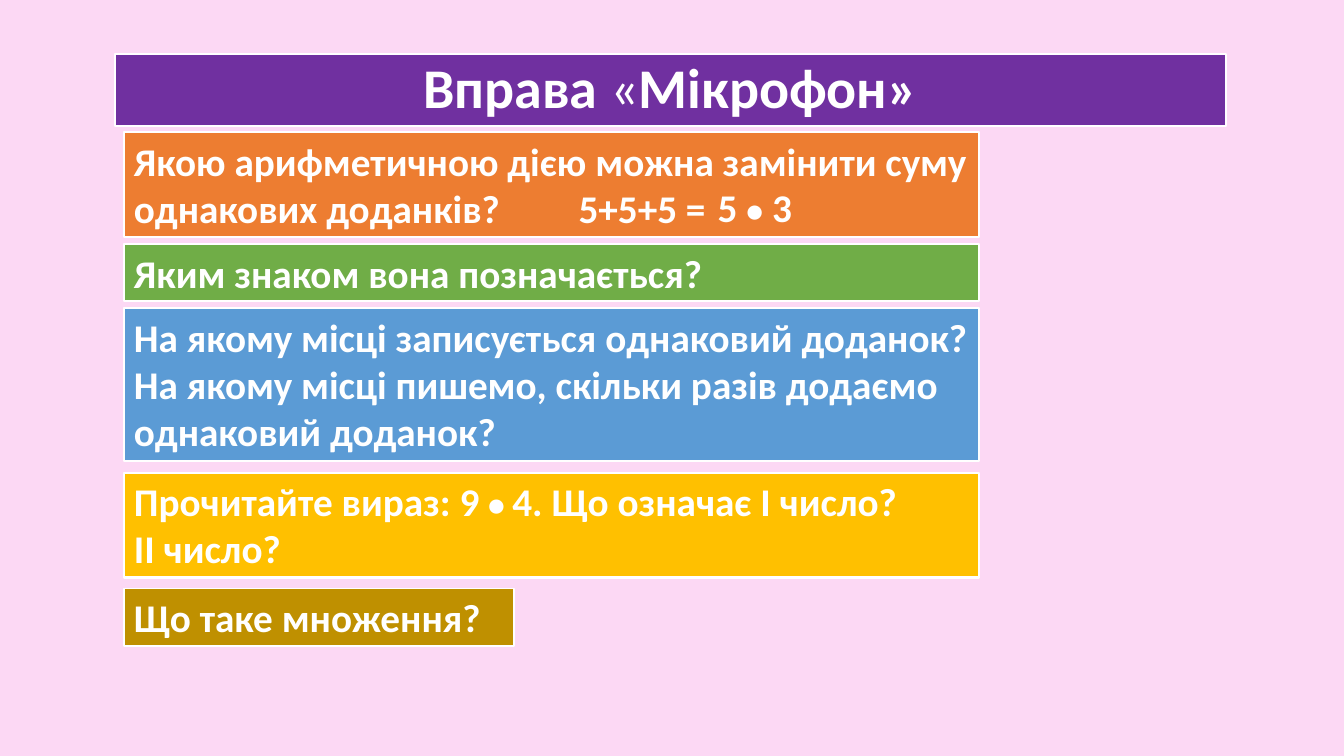
from dataclasses import dataclass

from pptx import Presentation
from pptx import util as u
from pptx.dml.color import RGBColor
from pptx.enum import shapes, text


@dataclass(frozen=True)
class Theme:
    font: str = "Calibri"
    background: str = "FCD8F4"
    ink: str = "FFFFFF"
    title: str = "7030A0"
    operation: str = "ED7D31"
    sign: str = "70AD47"
    places: str = "5B9BD5"
    reading: str = "FFC000"
    definition: str = "BF9000"
    title_size: int = 40
    body_size: int = 28
    dot_size: int = 24
    border: float = 1.5
    thin_border: float = 1


THEME = Theme()


def add_run(paragraph, wording, size=THEME.body_size, bold=True):
    run = paragraph.add_run()
    run.text = wording
    run.font.name = THEME.font
    run.font.size = u.Pt(size)
    run.font.bold = bold
    run.font.color.rgb = RGBColor.from_string(THEME.ink)


def write_lines(frame, lines):
    frame.word_wrap = True
    for index, line in enumerate(lines):
        paragraph = frame.add_paragraph() if index else frame.paragraphs[0]
        paragraph.alignment = text.PP_ALIGN.LEFT
        for run in line:
            add_run(paragraph, *run)


def add_panel(slide, box, color, border=THEME.border):
    panel = slide.shapes.add_shape(shapes.MSO_SHAPE.RECTANGLE, *map(u.Inches, box))
    panel.shadow.inherit = False
    panel.fill.solid()
    panel.fill.fore_color.rgb = RGBColor.from_string(color)
    panel.line.color.rgb = RGBColor.from_string(THEME.ink)
    panel.line.width = u.Pt(border)
    return panel.text_frame


def add_title(slide, box):
    frame = add_panel(slide, box, THEME.title)
    frame.word_wrap = True
    frame.vertical_anchor = text.MSO_ANCHOR.MIDDLE
    heading = frame.paragraphs[0]
    heading.alignment = text.PP_ALIGN.CENTER
    heading.line_spacing = 0.9
    add_run(heading, "Вправа ", THEME.title_size)
    add_run(heading, "«", THEME.title_size, False)
    add_run(heading, "Мікрофон»", THEME.title_size)


def add_question(slide, box, color, lines, border=THEME.border):
    frame = add_panel(slide, box, color, border)
    frame.vertical_anchor = text.MSO_ANCHOR.TOP
    write_lines(frame, lines)


def add_formula(slide, box, line):
    formula = slide.shapes.add_textbox(*map(u.Inches, box))
    write_lines(formula.text_frame, [line])


def add_questions(slide, left, top, width):
    one_line, two_lines, three_lines = 0.57, 1.04, 1.51
    add_question(slide, (left, top, width, two_lines), THEME.operation, [
        [("Якою арифметичною дією можна замінити суму однакових доданків?",)],
    ])
    add_question(slide, (left, top + 1.11, width, one_line), THEME.sign, [
        [("Яким знаком вона позначається?",)],
    ])
    add_question(slide, (left, top + 1.75, width, three_lines), THEME.places, [
        [("На якому місці записується однаковий доданок?",)],
        [("На якому місці пишемо, скільки разів додаємо однаковий доданок?",)],
    ])
    add_question(slide, (left, top + 3.38, width, two_lines), THEME.reading, [
        [("Прочитайте вираз: 9 ",), ("• ", THEME.dot_size), ("4. Що означає І число?",)],
        [("ІІ число?",)],
    ])
    add_question(slide, (left, top + 4.53, 3.87, one_line), THEME.definition, [
        [("Що таке множення?",)],
    ], THEME.thin_border)
    add_formula(slide, (left + 4.41, top + 0.47, 1.81, one_line), [("5+5+5 =",)])
    add_formula(slide, (left + 5.79, top + 0.46, 1.12, one_line),
                [("5 ",), ("•", THEME.dot_size), (" 3",)])


def main():
    deck = Presentation()
    deck.slide_width = u.Inches(13.33)
    deck.slide_height = u.Inches(7.5)
    slide = deck.slides.add_slide(deck.slide_layouts[6])
    slide.background.fill.solid()
    slide.background.fill.fore_color.rgb = RGBColor.from_string(THEME.background)
    add_title(slide, (1.14, 0.54, 11.02, 0.71))
    add_questions(slide, 1.23, 1.31, 8.48)
    deck.save("out.pptx")


if __name__ == "__main__":
    main()
